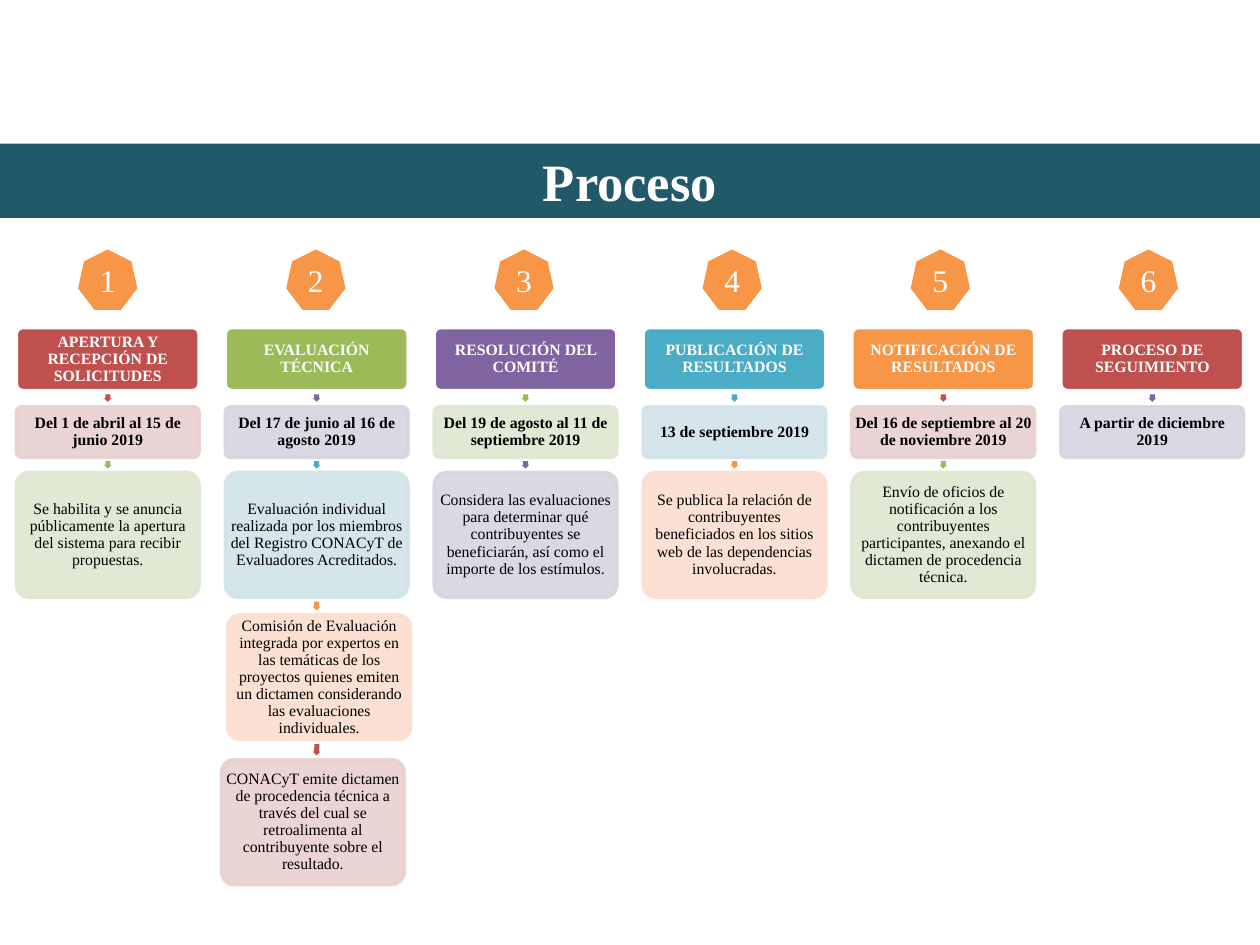
from dataclasses import dataclass
from itertools import cycle

from lxml import etree
from pptx import Presentation
from pptx import util as u
from pptx.dml.color import RGBColor
from pptx.enum import shapes, text
from pptx.oxml.ns import qn


@dataclass(frozen=True)
class Theme:
    font: str = "Times New Roman"
    white: str = "FFFFFF"
    black: str = "000000"
    band: str = "215968"
    badge: str = "F79646"
    head: float = 30
    mark: float = 18
    body: float = 9
    accents: tuple = ("C0504D", "9BBB59", "8064A2", "4BACC6", "F79646")
    tints: tuple = ("E8D0D0", "DEE7D1", "D8D3E0", "D0E3EA", "FCDDCF")


@dataclass(frozen=True)
class Box:
    x: float
    y: float
    w: float
    h: float


@dataclass(frozen=True)
class Slot:
    top: float
    high: float
    shift: float
    tip: float
    reach: float
    turn: float


@dataclass(frozen=True)
class Stage:
    name: str
    date: str
    notes: tuple = ()


THEME = Theme()
KIND = shapes.MSO_SHAPE
LEFT, WIDE, STEP = 0.13, 1.45, 8.29 / 5
BADGE, GAP = 0.62, 8.26 / 5
ARROW = 0.06

SLOTS = (
    Slot(3.23, 0.4, 0, 3.13, 0.06, 90),
    Slot(3.75, 0.99, 0, 3.66, 0.06, 90),
    Slot(4.88, 0.99, 0.02, 4.78, 0.07, 88.9),
    Slot(6.03, 0.99, -0.03, 5.92, 0.09, 92.2),
)

STAGES = (
    Stage("APERTURA Y RECEPCIÓN DE SOLICITUDES", "Del 1 de abril al 15 de junio 2019", (
        "Se habilita y se anuncia públicamente la apertura del sistema para recibir propuestas.",
    )),
    Stage("EVALUACIÓN TÉCNICA", "Del 17 de junio al 16 de agosto 2019", (
        "Evaluación individual realizada por los miembros del Registro CONACyT de "
        "Evaluadores Acreditados.",
        "Comisión de Evaluación integrada por expertos en las temáticas de los proyectos "
        "quienes emiten un dictamen considerando las evaluaciones individuales.",
        "CONACyT emite dictamen de procedencia técnica a través del cual se retroalimenta "
        "al contribuyente sobre el resultado.",
    )),
    Stage("RESOLUCIÓN DEL COMITÉ", "Del 19 de agosto al 11 de septiembre 2019", (
        "Considera las evaluaciones para determinar qué contribuyentes se beneficiarán, "
        "así como el importe de los estímulos.",
    )),
    Stage("PUBLICACIÓN DE RESULTADOS", "13 de septiembre 2019", (
        "Se publica la relación de contribuyentes beneficiados en los sitios web de las "
        "dependencias involucradas.",
    )),
    Stage("NOTIFICACIÓN DE RESULTADOS", "Del 16 de septiembre al 20 de noviembre 2019", (
        "Envío de oficios de notificación a los contribuyentes participantes, anexando el "
        "dictamen de procedencia técnica.",
    )),
    Stage("PROCESO DE SEGUIMIENTO", "A partir de diciembre 2019"),
)


def draw(slide, kind, box: Box, fill: str):
    shape = slide.shapes.add_shape(
        kind, u.Inches(box.x), u.Inches(box.y), u.Inches(box.w), u.Inches(box.h))
    shape.shadow.inherit = False
    shape.fill.solid()
    shape.fill.fore_color.rgb = RGBColor.from_string(fill)
    shape.line.fill.background()
    return shape


def write(shape, words: str, size: float, color: str, bold: bool = False,
          inset: float = 0, space: float = 1) -> None:
    frame = shape.text_frame
    frame.word_wrap = True
    frame.vertical_anchor = text.MSO_ANCHOR.MIDDLE
    frame.margin_left = frame.margin_right = u.Inches(inset)
    frame.margin_top = frame.margin_bottom = u.Inches(inset)
    para = frame.paragraphs[0]
    para.alignment = text.PP_ALIGN.CENTER
    para.line_spacing = space
    run = para.add_run()
    run.text = words
    run.font.name = THEME.font
    run.font.size = u.Pt(size)
    run.font.bold = bold
    run.font.color.rgb = RGBColor.from_string(color)


def fade(shape, share: int) -> None:
    for node in shape._element.spPr.iter(qn("a:srgbClr")):
        etree.SubElement(node, qn("a:alpha")).set("val", str(share * 1000))


def card(slide, box: Box, fill: str, edge: str, words: str, color: str, bold: bool):
    shape = draw(slide, KIND.ROUNDED_RECTANGLE, box, fill)
    shape.adjustments[0] = 0.1
    shape.line.color.rgb = RGBColor.from_string(edge)
    shape.line.width = u.Pt(2)
    write(shape, words, THEME.body, color, bold, inset=0.01, space=0.9)
    return shape


def arrow(slide, mid: float, slot: Slot, fill: str) -> None:
    box = Box(mid - slot.reach / 2, slot.tip, slot.reach, ARROW)
    shape = draw(slide, KIND.RIGHT_ARROW, box, fill)
    shape.adjustments[0] = 0.67
    shape.rotation = slot.turn


def column(slide, left: float, stage: Stage, accent: str, hues) -> None:
    card(slide, Box(left, 2.6, WIDE, 0.5), accent, THEME.white, stage.name, THEME.white, True)
    for rank, (slot, words) in enumerate(zip(SLOTS, (stage.date, *stage.notes))):
        hue, tint = next(hues)
        arrow(slide, left + WIDE / 2, slot, hue)
        box = Box(left + slot.shift, slot.top, WIDE, slot.high)
        fade(card(slide, box, tint, tint, words, THEME.black, rank == 0), 90)


def main() -> None:
    deck = Presentation()
    deck.slide_width, deck.slide_height = u.Inches(10), u.Inches(7.5)
    slide = deck.slides.add_slide(deck.slide_layouts[6])

    band = draw(slide, KIND.RECTANGLE, Box(0, 1.14, 10, 0.59), THEME.band)
    write(band, "Proceso", THEME.head, THEME.white, True, inset=0.05)

    hues = cycle(list(zip(THEME.accents, THEME.tints)))
    for rank, (stage, accent) in enumerate(zip(STAGES, cycle(THEME.accents))):
        column(slide, LEFT + rank * STEP, stage, accent, hues)
        badge = draw(slide, KIND.HEPTAGON, Box(BADGE + rank * GAP, 1.98, 0.47, 0.48), THEME.badge)
        write(badge, str(rank + 1), THEME.mark, THEME.white)

    deck.save("out.pptx")


if __name__ == "__main__":
    main()
